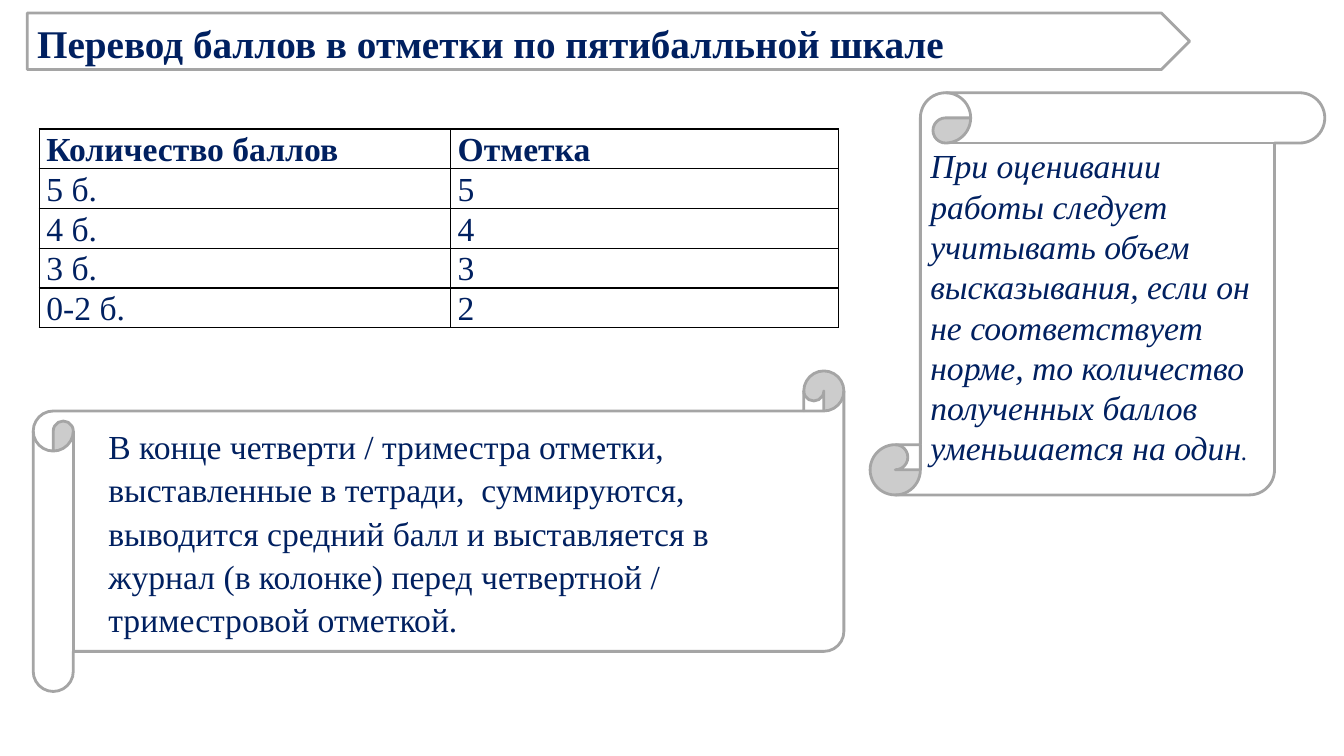
"""Builds the slide on converting points into marks on a five-point scale."""
import pptx
import pptx.dml.color
import pptx.enum.shapes
import pptx.enum.text
import pptx.oxml
import pptx.oxml.ns
import pptx.util

Inches, Pt = pptx.util.Inches, pptx.util.Pt
RGB = pptx.dml.color.RGBColor.from_string
SHAPE = pptx.enum.shapes.MSO_SHAPE
ALIGN = pptx.enum.text.PP_ALIGN
MIDDLE = pptx.enum.text.MSO_ANCHOR.MIDDLE
COLORS = {"navy": "002060", "white": "FFFFFF", "outline": "A5A5A5", "border": "000000"}


def write(paragraph, text, size=24, bold=False, italic=False,
          align=ALIGN.LEFT, spacing=1.07, after=8):
    paragraph.alignment = align
    paragraph.line_spacing = spacing
    paragraph.space_after = Pt(after)
    run = paragraph.add_run()
    run.text = text
    run.font.name = "Times New Roman"
    run.font.size = Pt(size)
    run.font.bold = bold
    run.font.italic = italic
    run.font.color.rgb = RGB(COLORS["navy"])


def add_panel(preset, left, top, width, height):
    panel = slide.shapes.add_shape(preset, Inches(left), Inches(top), Inches(width), Inches(height))
    panel.shadow.inherit = False
    panel.fill.solid()
    panel.fill.fore_color.rgb = RGB(COLORS["white"])
    panel.line.color.rgb = RGB(COLORS["outline"])
    panel.line.width = Pt(2)
    panel.text_frame.word_wrap = True
    panel.text_frame.vertical_anchor = MIDDLE
    return panel.text_frame.paragraphs[0]


deck = pptx.Presentation()
deck.slide_width, deck.slide_height = Inches(13.33), Inches(7.5)
slide = deck.slides.add_slide(deck.slide_layouts[6])

heading = add_panel(SHAPE.PENTAGON, 0.27, 0.13, 11.53, 0.56)
write(heading, "Перевод баллов в отметки по пятибалльной шкале",
      size=28, bold=True, align=ALIGN.JUSTIFY)

marks = [("Количество баллов", "Отметка"), ("5 б.", "5"), ("4 б.", "4"), ("3 б.", "3"), ("0-2 б.", "2")]
scale = slide.shapes.add_table(len(marks), 2, Inches(0.39), Inches(1.28), Inches(7.93), Inches(1.85)).table
scale.columns[0].width, scale.columns[1].width = Inches(4.08), Inches(3.85)
scale.horz_banding = False
for row, values in enumerate(marks):
    for column, value in enumerate(values):
        cell = scale.cell(row, column)
        cell.margin_left = cell.margin_right = Inches(0.07)
        cell.margin_top = cell.margin_bottom = 0
        cell.fill.background()
        write(cell.text_frame.paragraphs[0], value, bold=row == 0)
        for position, side in enumerate(("lnL", "lnR", "lnT", "lnB")):
            cell._tc.get_or_add_tcPr().insert(position, pptx.oxml.parse_xml(
                f'<a:{side} {pptx.oxml.ns.nsdecls("a")} w="{Pt(1)}"><a:solidFill>'
                f'<a:srgbClr val="{COLORS["border"]}"/></a:solidFill></a:{side}>'))

volume_rule = add_panel(SHAPE.VERTICAL_SCROLL, 8.63, 0.92, 4.51, 3.99)
write(volume_rule, "При оценивании работы следует учитывать объем высказывания, если он "
      "не соответствует норме, то количество полученных баллов уменьшается на один",
      italic=True, spacing=1.0, after=0)
write(volume_rule, ".", size=18, italic=True, spacing=1.0, after=0)

term_rule = add_panel(SHAPE.HORIZONTAL_SCROLL, 0.33, 3.68, 8.04, 3.18)
term_rule._p.get_or_add_pPr().set("marL", str(Inches(0.25)))
write(term_rule, "В конце четверти / триместра отметки, выставленные в тетради,  суммируются, "
      "выводится средний балл и выставляется в журнал (в колонке) перед четвертной / "
      "триместровой отметкой.")

deck.save("out.pptx")
